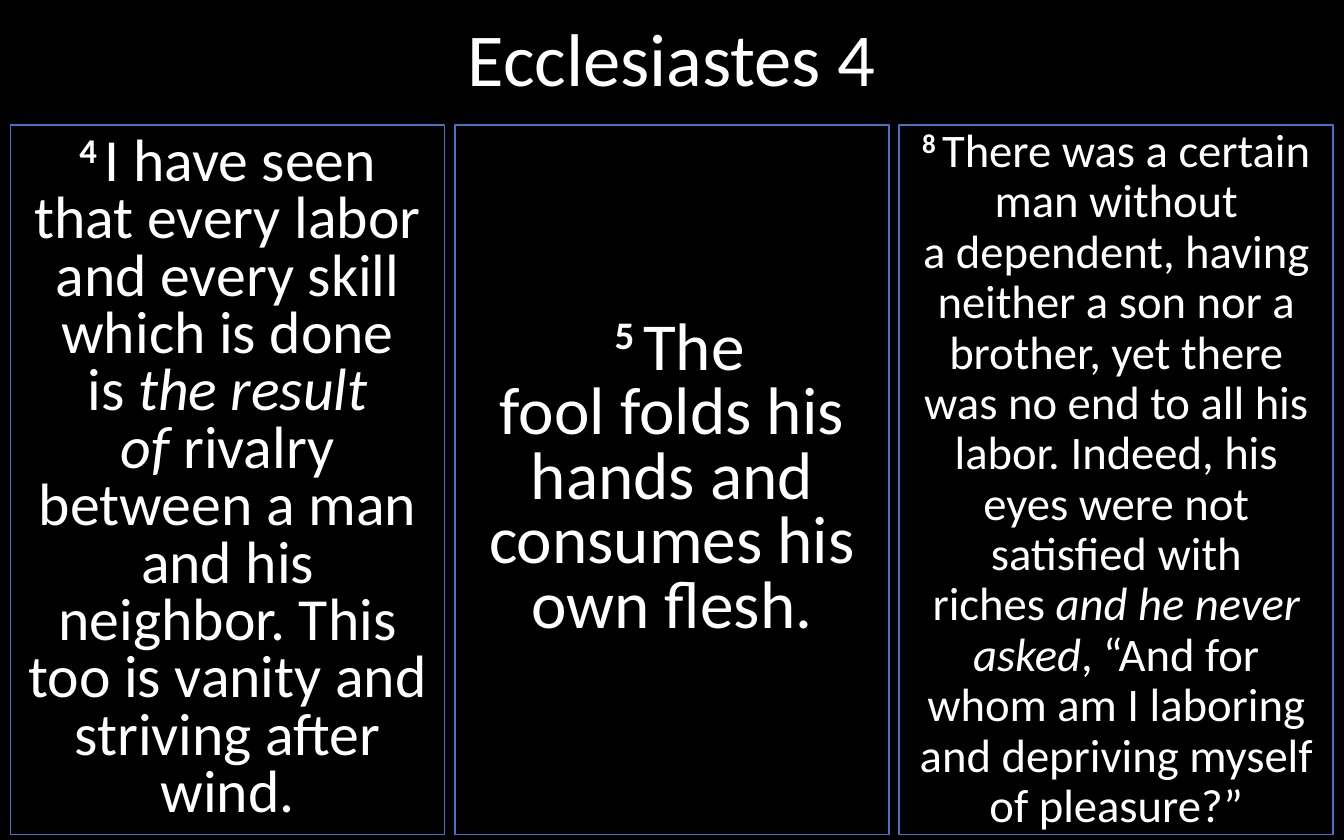
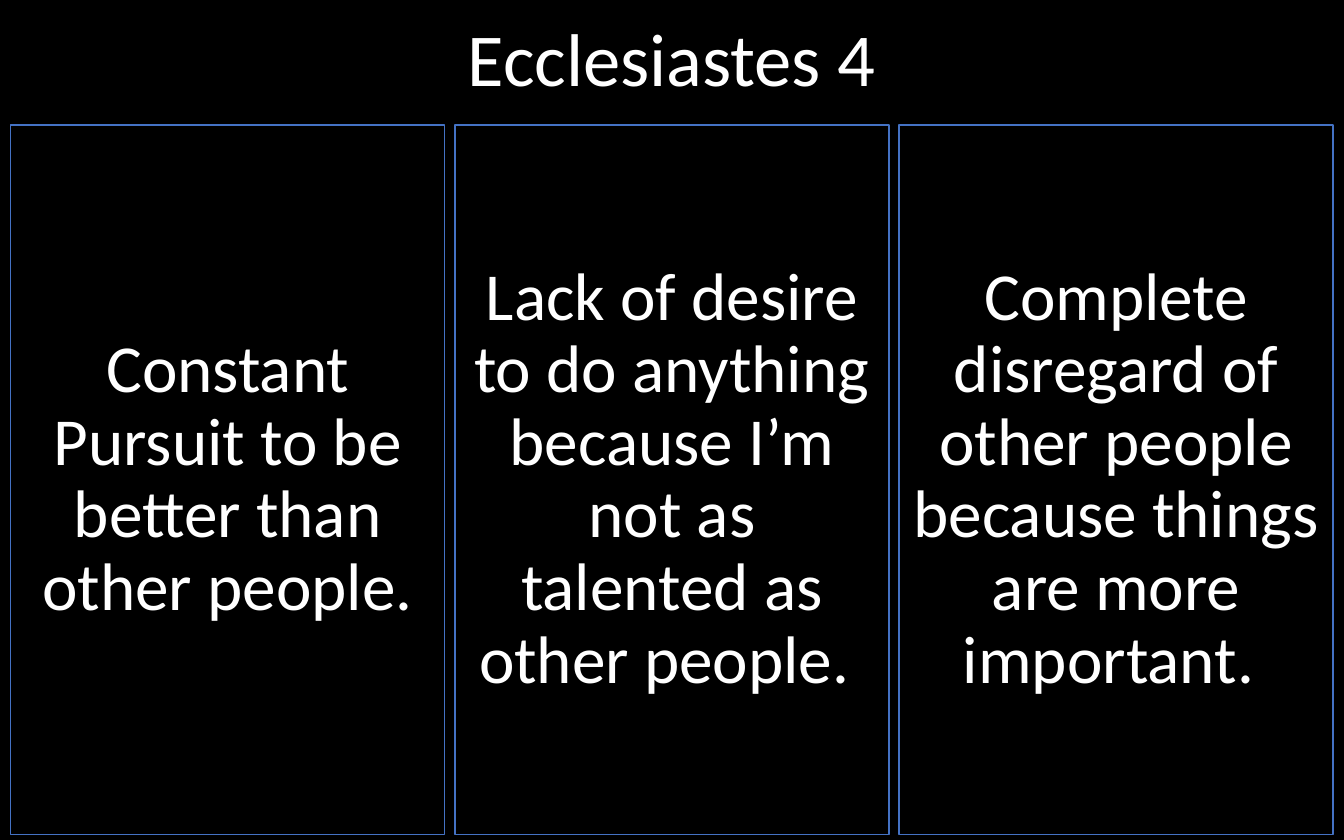
from dataclasses import dataclass

from pptx import Presentation
from pptx.dml.color import RGBColor
from pptx.enum.shapes import MSO_SHAPE
from pptx.enum.text import MSO_ANCHOR, PP_ALIGN
from pptx.util import Inches, Pt

RECTANGLE = MSO_SHAPE.RECTANGLE
MIDDLE = MSO_ANCHOR.MIDDLE
CENTER = PP_ALIGN.CENTER


@dataclass(frozen=True)
class Theme:
    background: RGBColor = RGBColor(0x00, 0x00, 0x00)
    text: RGBColor = RGBColor(0xFF, 0xFF, 0xFF)
    border: RGBColor = RGBColor(0x44, 0x72, 0xC4)
    font: str = "Calibri"
    title_size: int = 40
    reason_size: int = 36
    border_width: float = 0.75


THEME = Theme()

# Layout, in inches
SLIDE_WIDTH, SLIDE_HEIGHT = 10, 6.25
MARGIN = 0.08
CONTENT_WIDTH = SLIDE_WIDTH - 2 * MARGIN
TITLE_HEIGHT = 0.93
PANEL_WIDTH, PANEL_HEIGHT = 3.23, 5.28
PANEL_PITCH = (CONTENT_WIDTH - PANEL_WIDTH) / 2

# Run styles
PLAIN, ITALIC, VERSE_NUMBER = "plain", "italic", "verse number"

# Content: each panel is (size, line spacing, runs); "~" is a no-break space
HEADING = "Ecclesiastes 4"
VERSES = [
    (32, 0.8, [
        ("4~", VERSE_NUMBER),
        ("I have seen that every labor and every~skill which is done is~", PLAIN),
        ("the result of", ITALIC),
        ("~rivalry between a man and his neighbor. "
         "This too is~vanity and striving after wind.", PLAIN),
    ]),
    (36, 0.8, [
        ("~", PLAIN),
        ("5~", VERSE_NUMBER),
        ("The fool~folds his hands and consumes his own flesh.", PLAIN),
    ]),
    (25, 0.9, [
        ("8~", VERSE_NUMBER),
        ("There was a certain man without a~dependent, having neither a son "
         "nor a brother, yet there was no end to all his labor. Indeed,~his "
         "eyes were not satisfied with riches~", PLAIN),
        ("and he never asked", ITALIC),
        (", “And~for whom am I laboring and depriving myself of pleasure?”", PLAIN),
    ]),
]
REASONS = [
    (THEME.reason_size, 0.9, [(sentence, PLAIN)])
    for sentence in (
        "Constant Pursuit to be better than other people.",
        "Lack of desire to do anything because I’m not as talented as other people. ",
        "Complete disregard of other people because things are more important. ",
    )
]


def write_text(shape, size, line_spacing, runs):
    """Fill a shape with one centred paragraph of styled runs."""
    frame = shape.text_frame
    frame.word_wrap = True
    frame.vertical_anchor = MIDDLE
    paragraph = frame.paragraphs[0]
    paragraph.alignment = CENTER
    paragraph.line_spacing = line_spacing
    paragraph.font.name = THEME.font
    paragraph.font.size = Pt(size)
    paragraph.font.color.rgb = THEME.text
    for words, style in runs:
        run = paragraph.add_run()
        run.text = words.replace("~", chr(160))
        # Run properties replace the paragraph's when the file is drawn
        run.font.name = THEME.font
        run.font.size = Pt(size)
        run.font.color.rgb = THEME.text
        if style == ITALIC:
            run.font.italic = True
        elif style == VERSE_NUMBER:
            run.font.bold = True
            run._r.get_or_add_rPr().set("baseline", "30000")


def add_title(slide):
    title = slide.shapes.add_textbox(
        Inches(MARGIN), 0, Inches(CONTENT_WIDTH), Inches(TITLE_HEIGHT))
    write_text(title, THEME.title_size, 0.9, [(HEADING, PLAIN)])


def add_panel(slide, column, size, line_spacing, runs):
    panel = slide.shapes.add_shape(
        RECTANGLE, Inches(MARGIN + column * PANEL_PITCH), Inches(TITLE_HEIGHT),
        Inches(PANEL_WIDTH), Inches(PANEL_HEIGHT))
    panel.shadow.inherit = False
    panel.fill.background()
    panel.line.color.rgb = THEME.border
    panel.line.width = Pt(THEME.border_width)
    write_text(panel, size, line_spacing, runs)


def add_panel_slide(deck, panels):
    slide = deck.slides.add_slide(deck.slide_layouts[6])
    slide.background.fill.solid()
    slide.background.fill.fore_color.rgb = THEME.background
    for column, panel in enumerate(panels):
        add_panel(slide, column, *panel)
    add_title(slide)


def main():
    deck = Presentation()
    deck.slide_width = Inches(SLIDE_WIDTH)
    deck.slide_height = Inches(SLIDE_HEIGHT)
    for panels in (VERSES, REASONS):
        add_panel_slide(deck, panels)
    deck.save("out.pptx")


if __name__ == "__main__":
    main()
